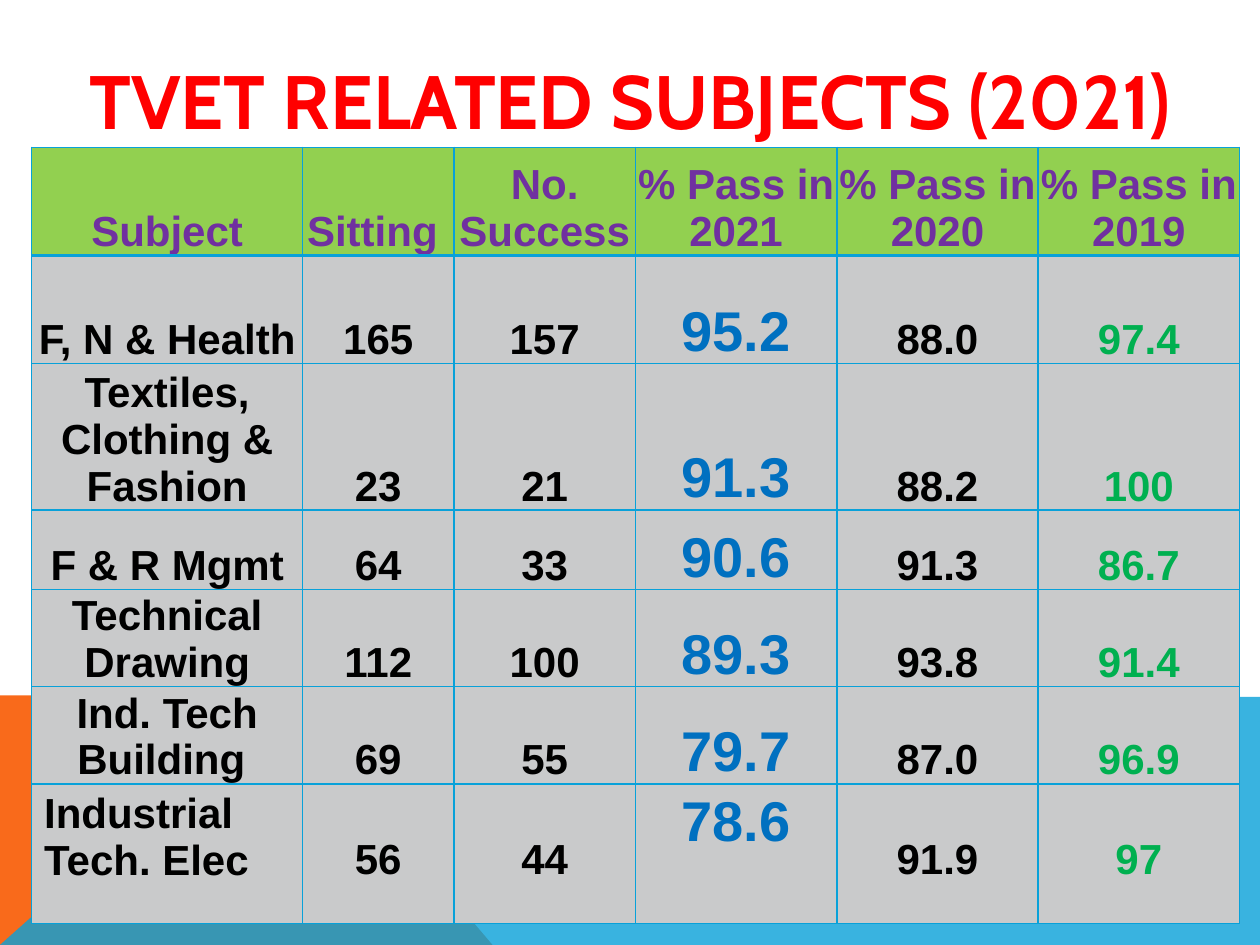
"""Build a slide with a table of pass rates in TVET subjects."""
from dataclasses import dataclass

from lxml.etree import SubElement as Sub
from pptx import Presentation
from pptx.dml.color import RGBColor as Rgb
from pptx.enum.text import MSO_ANCHOR as Anchor, PP_ALIGN as Align
from pptx.oxml.ns import qn
from pptx.util import Cm, Pt


@dataclass(frozen=True)
class Theme:
    title: str = "FF0000"
    head: str = "7030A0"
    text: str = "000000"
    now: str = "0070C0"
    past: str = "00B050"
    green: str = "92D050"
    grey: str = "C9CACB"
    line: str = "08A1D9"
    warm: str = "F96A1B"
    face: str = "Arial"
    display: str = "Cabin"
    huge: float = 43.2
    big: int = 32
    size: int = 24


theme = Theme()


def style(para, face, size, color, align):
    para.alignment = align
    font = para.font
    font.name, font.size, font.bold = face, Pt(size), True
    font.color.rgb = Rgb.from_string(color)


def edge(cell, side, width):
    line = Sub(cell._tc.get_or_add_tcPr(), qn(f"a:ln{side}"), w=str(Pt(width)))
    fill = Sub(line, qn("a:solidFill"))
    Sub(fill, qn("a:srgbClr"), val=theme.line)


deck = Presentation()
deck.slide_width, deck.slide_height = Cm(25.4), Cm(19.05)
slide = deck.slides.add_slide(deck.slide_layouts[5])

title = slide.shapes.title
title.left, title.top, title.width, title.height = Cm(1.27), Cm(0.64), Cm(22.86), Cm(2.74)
title.text_frame.text = "TVET RELATED SUBJECTS (2021)"
title.text_frame.vertical_anchor = Anchor.MIDDLE
style(title.text_frame.paragraphs[0], theme.display, theme.huge, theme.title, Align.CENTER)

bands = [
    (theme.warm, 100, [(0, 19.05), (0, 14.02), (5.66, 14.02), (9.93, 19.05)]),
    (theme.line, 80, [(0, 19.05), (5.66, 14.02), (25.4, 14.05), (25.4, 19.05)]),
]
for color, alpha, points in bands:
    start, *rest = [(Cm(x), Cm(y)) for x, y in points]
    path = slide.shapes.build_freeform(*start)
    path.add_line_segments(rest, close=True)
    band = path.convert_to_shape()
    band.shadow.inherit = False
    band.line.fill.background()
    band.fill.solid()
    band.fill.fore_color.rgb = Rgb.from_string(color)
    if alpha < 100:
        tint = band._element.spPr.find(qn("a:solidFill"))[0]
        Sub(tint, qn("a:alpha"), val=str(alpha * 1000))

rows = [
    ("Subject", "Sitting ", "No. Success", "% Pass in 2021", "% Pass in 2020", "% Pass in 2019"),
    ("F, N & Health", "165", "157", "95.2", "88.0", "97.4"),
    ("Textiles, Clothing & Fashion", "23", "21", "91.3", "88.2", "100"),
    ("F & R Mgmt", "64", "33", "90.6", "91.3", "86.7"),
    ("Technical Drawing", "112", "100", "89.3", "93.8", "91.4"),
    ("Ind. Tech Building ", "69", "55", "79.7", "87.0", "96.9"),
    ("Industrial Tech. Elec", "56", "44", "78.6", "91.9", "97"),
]
widths = [5.46, 3.05, 3.66, 4.06, 4.06, 4.06]
heights = [2.18, 2.18, 2.95, 1.6, 1.96, 1.96, 2.82]
inks = [theme.text] * 3 + [theme.now, theme.text, theme.past]
last = len(rows) - 1

frame = slide.shapes.add_table(
    len(rows), len(widths), Cm(0.64), Cm(2.97), Cm(sum(widths)), Cm(sum(heights)))
table = frame.table
for col, width in zip(table.columns, widths):
    col.width = Cm(width)
for row, height in zip(table.rows, heights):
    row.height = Cm(height)

for r, row in enumerate(rows):
    for c, text in enumerate(row):
        cell = table.cell(r, c)
        cell.text = text
        if r == last:
            cell.vertical_anchor = Anchor.TOP
            cell.margin_left = cell.margin_right = Cm(0.25)
            cell.margin_top = Cm(0.13 if c in (0, 3) else 1.07)
            cell.margin_bottom = Cm(0.13)
        else:
            cell.vertical_anchor = Anchor.BOTTOM
            cell.margin_left = cell.margin_right = cell.margin_top = Cm(0.03)
            cell.margin_bottom = 0
        for side in "LRTB":
            thick = (r, side) in ((0, "B"), (1, "T"))
            edge(cell, side, 2 if thick else 1)
        cell.fill.solid()
        cell.fill.fore_color.rgb = Rgb.from_string(theme.grey if r else theme.green)
        style(
            cell.text_frame.paragraphs[0],
            theme.face,
            theme.big if r and c == 3 else theme.size,
            inks[c] if r else theme.head,
            Align.LEFT if r == last and c == 0 else Align.CENTER,
        )

deck.save("out.pptx")
